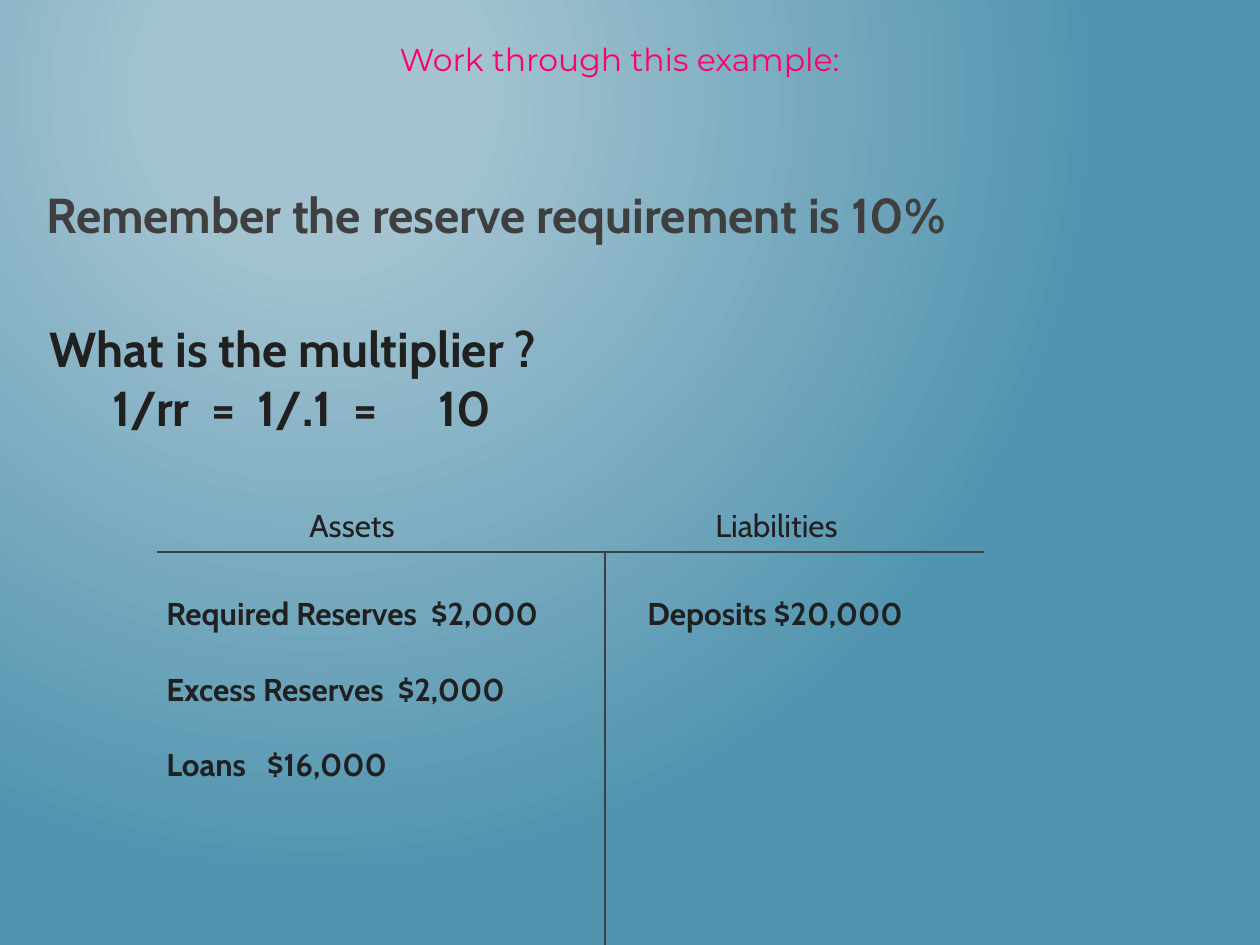
"""Build the reserve requirement example slide with its T-account."""
from lxml import etree
from pptx import Presentation, util as u
from pptx.dml.color import RGBColor
from pptx.enum import shapes, text
from pptx.oxml import parse_xml
from pptx.oxml.ns import qn

COLORS = {"glow": "A3C3D1", "water": "5194AF", "line": "3F3F3F",
          "grey": "3F3F3F", "ink": "202020", "pink": "FF0066"}
SLIDE_SIZE = (1260, 945)
HEADING = dict(size=28, bold=True)
ENTRY = dict(size=18, bold=True)
LABEL = dict(size=18)
TEXTS = [
    ((34, 178, 1201, 72), ["Remember the reserve requirement is 10%"],
     dict(HEADING, color="grey")),
    ((297, 500, 192, 53), ["Assets"], LABEL),
    ((703, 500, 192, 53), ["Liabilities"], LABEL),
    ((105, 34, 1029, 53), ["Work through this example:"],
     dict(LABEL, color="pink", font="Montserrat", align=text.PP_ALIGN.CENTER)),
    ((635, 588, 368, 50), ["Deposits $20,000"], ENTRY),
    ((154, 588, 451, 242),
     ["Required Reserves  $2,000", "Excess Reserves  $2,000", "Loans   $16,000"],
     dict(ENTRY, gap=21.6)),
    ((37, 312, 1164, 190), ["What is the multiplier ?", "\t1/rr  =  1/.1  =\t 10"],
     HEADING),
]
ACCOUNT_LINES = [(157, 552, 984, 552), (605, 552, 605, 973)]
GRADIENT = f"""
<a:gradFill xmlns:a="http://schemas.openxmlformats.org/drawingml/2006/main" rotWithShape="1">
  <a:gsLst>
    <a:gs pos="0"><a:srgbClr val="{COLORS['glow']}"/></a:gs>
    <a:gs pos="20000"><a:srgbClr val="{COLORS['glow']}"/></a:gs>
    <a:gs pos="100000"><a:srgbClr val="{COLORS['water']}"/></a:gs>
  </a:gsLst>
  <a:path path="circle"><a:fillToRect l="50000" t="20000" r="100000" b="100000"/></a:path>
</a:gradFill>"""


def px(*values):
    return [u.Emu(round(value * 914400 / 126)) for value in values]


def paint_background(slide):
    slide.background.fill.solid()
    solid = next(slide.element.iter(qn("a:solidFill")))
    solid.getparent().replace(solid, parse_xml(GRADIENT))


def add_line(slide, ends):
    line = slide.shapes.add_connector(shapes.MSO_CONNECTOR.STRAIGHT, *px(*ends))
    line.line.color.rgb = RGBColor.from_string(COLORS["line"])
    line.line.width = u.Pt(0.75)
    etree.SubElement(line.element.spPr, qn("a:effectLst"))


def add_text(slide, box, lines, size, bold=False, color="ink", font="Cabin",
             align=text.PP_ALIGN.LEFT, gap=0):
    frame = slide.shapes.add_textbox(*px(*box)).text_frame
    frame.word_wrap = True
    for index, line in enumerate(lines):
        paragraph = frame.add_paragraph() if index else frame.paragraphs[0]
        paragraph.alignment = align
        paragraph.space_before = u.Pt(gap if index else 0)
        run = paragraph.add_run()
        run.text = line
        run.font.name = font
        run.font.size = u.Pt(size)
        run.font.bold = bold
        run.font.color.rgb = RGBColor.from_string(COLORS[color])


def main():
    presentation = Presentation()
    presentation.slide_width, presentation.slide_height = px(*SLIDE_SIZE)
    slide = presentation.slides.add_slide(presentation.slide_layouts[6])
    paint_background(slide)
    for ends in ACCOUNT_LINES:
        add_line(slide, ends)
    for box, lines, style in TEXTS:
        add_text(slide, box, lines, **style)
    presentation.save("out.pptx")


if __name__ == "__main__":
    main()
